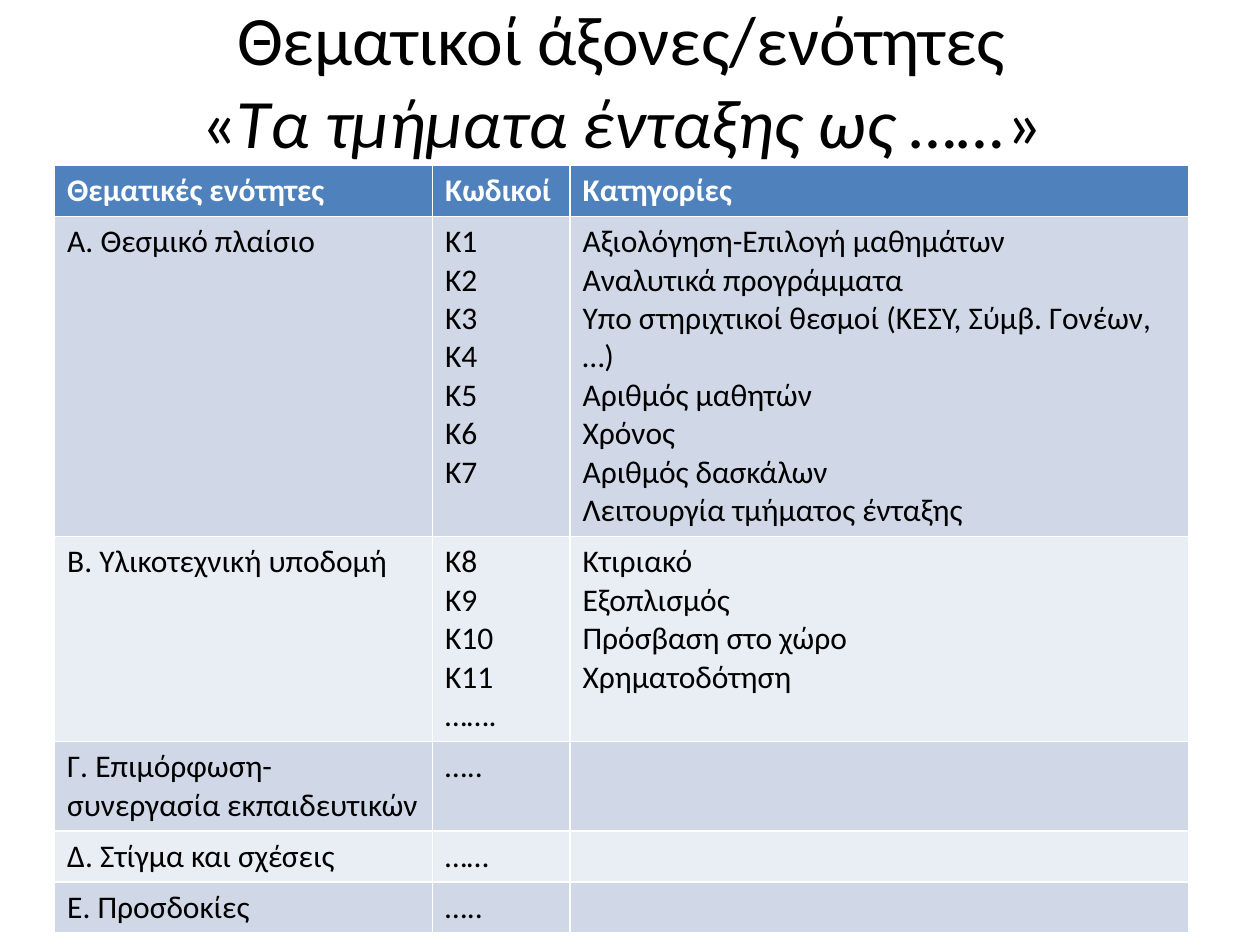
from dataclasses import dataclass

from pptx import Presentation
from pptx.dml.color import RGBColor
from pptx.enum.text import MSO_ANCHOR, MSO_AUTO_SIZE, PP_ALIGN
from pptx.slide import Slide
from pptx.util import Cm, Pt

MIDDLE = MSO_ANCHOR.MIDDLE
NO_AUTOFIT = MSO_AUTO_SIZE.NONE
CENTER = PP_ALIGN.CENTER

BLACK = RGBColor(0x00, 0x00, 0x00)
WHITE = RGBColor(0xFF, 0xFF, 0xFF)
HEADER_BLUE = RGBColor(0x4F, 0x81, 0xBD)
BAND_DARK = RGBColor(0xD0, 0xD8, 0xE8)
BAND_LIGHT = RGBColor(0xE9, 0xED, 0xF4)

LEFT, WIDTH = Cm(1.1), Cm(22.86)
COLUMN_WIDTHS = [Cm(7.62), Cm(2.77), Cm(12.47)]
ROW_HEIGHT = Cm(1.03)

THEMES = [
    (["Θεματικές ενότητες"], ["Κωδικοί"], ["Κατηγορίες"]),
    (
        ["Α. Θεσμικό πλαίσιο"],
        [f"Κ{number}" for number in range(1, 8)],
        [
            "Αξιολόγηση-Επιλογή μαθημάτων",
            "Αναλυτικά προγράμματα",
            "Υπο στηριχτικοί θεσμοί (ΚΕΣΥ, Σύμβ. Γονέων, …)",
            "Αριθμός μαθητών",
            "Χρόνος",
            "Αριθμός δασκάλων",
            "Λειτουργία τμήματος ένταξης",
        ],
    ),
    (
        ["Β. Υλικοτεχνική υποδομή"],
        [f"Κ{number}" for number in range(8, 12)] + ["……."],
        ["Κτιριακό", "Εξοπλισμός", "Πρόσβαση στο χώρο", "Χρηματοδότηση"],
    ),
    (["Γ. Επιμόρφωση-συνεργασία εκπαιδευτικών"], ["….."], []),
    (["Δ. Στίγμα και σχέσεις"], ["……"], []),
    (["Ε. Προσδοκίες"], ["….."], []),
]


@dataclass
class PageBuilder:
    page: Slide
    font_name: str = "Calibri"
    title_size: float = 39.6
    table_size: float = 18

    def style(self, para, size, color, bold=False):
        para.font.name = self.font_name
        para.font.size = Pt(size)
        para.font.bold = bold
        para.font.color.rgb = color

    def title(self, first_line, quoted):
        box = self.page.shapes.title
        box.left, box.top, box.width, box.height = LEFT, Cm(0), WIDTH, Cm(3.18)
        frame = box.text_frame
        frame.auto_size = NO_AUTOFIT
        frame.vertical_anchor = MIDDLE
        para = frame.paragraphs[0]
        para.alignment = CENTER
        self.style(para, self.title_size, BLACK)
        para.add_run().text = first_line
        para.add_line_break()
        for text, italic in (("«", False), (quoted, True), ("»", False)):
            span = para.add_run()
            span.text = text
            span.font.italic = italic

    def table(self, rows):
        table = self.page.shapes.add_table(
            len(rows), len(COLUMN_WIDTHS), LEFT, Cm(3.33), WIDTH, ROW_HEIGHT * len(rows)
        ).table
        for column, width in zip(table.columns, COLUMN_WIDTHS):
            column.width = width
        for row_index, row in enumerate(rows):
            header = row_index == 0
            band = BAND_DARK if row_index % 2 else BAND_LIGHT
            for column_index, lines in enumerate(row):
                cell = table.cell(row_index, column_index)
                cell.fill.solid()
                cell.fill.fore_color.rgb = HEADER_BLUE if header else band
                cell.text = "\n".join(lines)
                for para in cell.text_frame.paragraphs:
                    self.style(para, self.table_size, WHITE if header else BLACK, header)


def main():
    deck = Presentation()
    deck.slide_width, deck.slide_height = Cm(25.4), Cm(19.05)
    builder = PageBuilder(deck.slides.add_slide(deck.slide_layouts[5]))
    builder.title("Θεματικοί άξονες/ενότητες", "Τα τμήματα ένταξης ως ……")
    builder.table(THEMES)
    deck.save("out.pptx")


if __name__ == "__main__":
    main()
